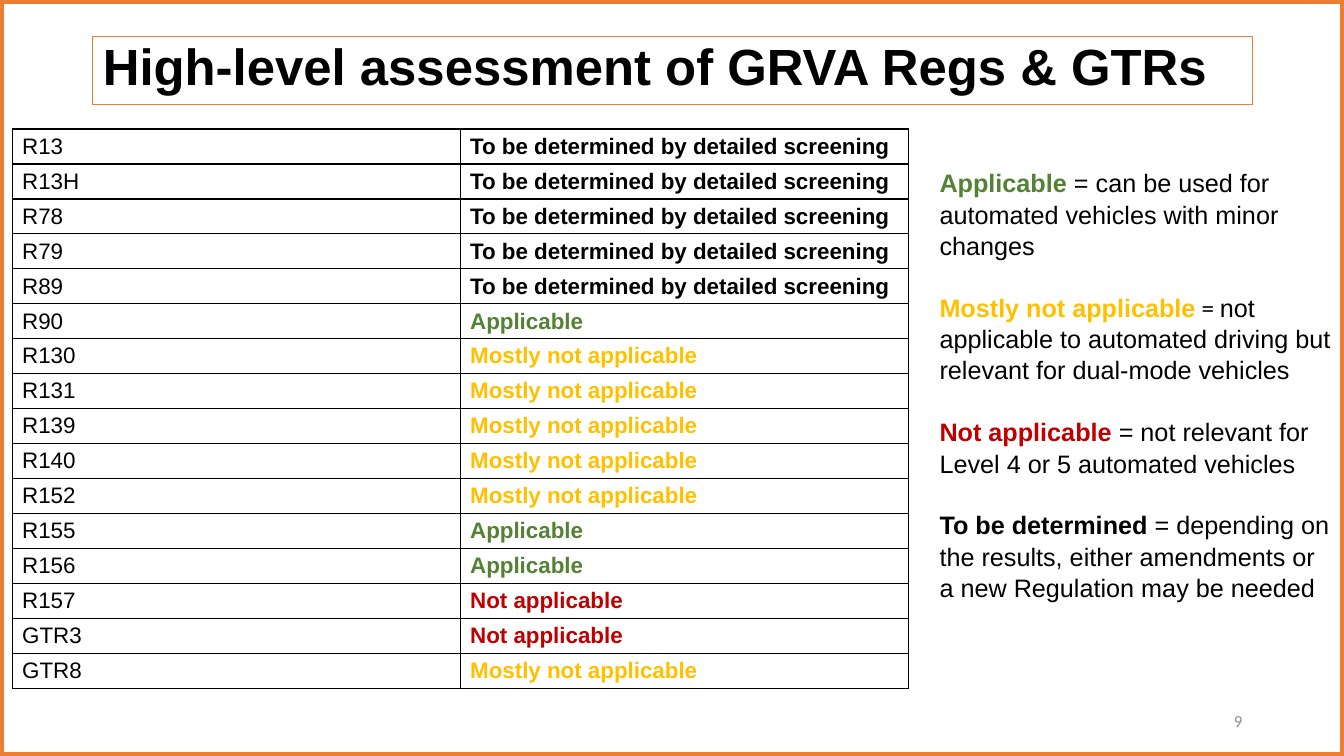
from dataclasses import dataclass

from lxml.etree import SubElement
from pptx import Presentation
from pptx.dml.color import RGBColor
from pptx.enum.shapes import MSO_SHAPE
from pptx.enum.text import MSO_ANCHOR, MSO_AUTO_SIZE, PP_ALIGN
from pptx.oxml.ns import qn
from pptx.util import Inches, Pt


@dataclass(frozen=True)
class Theme:
    black: str = "000000"
    green: str = "548235"
    amber: str = "FFC000"
    red: str = "C00000"
    grey: str = "8C8C8C"
    orange: str = "ED7D31"
    font: str = "Arial"
    alt_font: str = "Calibri"
    title: float = 36.3
    legend: float = 18
    cell: float = 16
    number: float = 12


T = Theme()
W, H = 13.33, 7.5
COL_W, ROW_H = W / 3, 0.347

TBD = "To be determined by detailed screening"
YES, MOSTLY, NO = "Applicable", "Mostly not applicable", "Not applicable"
RATING_COLORS = {TBD: T.black, YES: T.green, MOSTLY: T.amber, NO: T.red}

# Regulations grouped in runs that share a rating
GROUPS = [
    (("R13", "R13H", "R78", "R79", "R89"), TBD),
    (("R90",), YES),
    (("R130", "R131", "R139", "R140", "R152"), MOSTLY),
    (("R155", "R156"), YES),
    (("R157", "GTR3"), NO),
    (("GTR8",), MOSTLY),
]

# Term, its colour, equals sign, font of the sign, meaning
LEGEND = [
    (YES, T.green, " = ", T.font,
     "can be used for automated vehicles with minor changes"),
    (MOSTLY, T.amber, " = ", T.alt_font,
     "not applicable to automated driving but relevant for dual-mode vehicles"),
    (NO, T.red, " = ", T.font,
     "not relevant for Level 4 or 5 automated vehicles"),
    ("To be determined", T.black, " = ", T.font,
     "depending on the results, either amendments or a new Regulation may be needed"),
]


def set_all(obj, values):
    for name, value in values.items():
        setattr(obj, name, value)


def add_run(p, text, size, color=T.black, bold=False, font=T.font):
    r = p.add_run()
    r.text = text
    set_all(r.font, {"size": Pt(size), "bold": bold, "name": font})
    r.font.color.rgb = RGBColor.from_string(color)


def place(sp, left, top, width, height):
    set_all(sp, {"left": Inches(left), "top": Inches(top),
                 "width": Inches(width), "height": Inches(height)})


def outline(sp, width):
    sp.line.color.rgb = RGBColor.from_string(T.orange)
    sp.line.width = Pt(width)


def add_title(s, text):
    sp = s.shapes.title
    place(sp, 0.92, 0.36, 11.5, 0.68)
    outline(sp, 0.75)
    tf = sp.text_frame
    set_all(tf, {"word_wrap": True, "auto_size": MSO_AUTO_SIZE.NONE,
                 "vertical_anchor": MSO_ANCHOR.MIDDLE})
    p = tf.paragraphs[0]
    set_all(p, {"alignment": PP_ALIGN.LEFT, "line_spacing": 0.8})
    add_run(p, text, T.title, bold=True)


def add_text_box(s, left, top, width, height, anchor=MSO_ANCHOR.TOP):
    tf = s.shapes.add_textbox(Inches(left), Inches(top),
                              Inches(width), Inches(height)).text_frame
    set_all(tf, {"word_wrap": True, "vertical_anchor": anchor})
    return tf


def add_borders(cell):
    tc_pr = cell._tc.get_or_add_tcPr()
    for i, side in enumerate(("lnL", "lnR", "lnT", "lnB")):
        ln = SubElement(tc_pr, qn(f"a:{side}"), w=str(Pt(1)))
        fill = SubElement(ln, qn("a:solidFill"))
        SubElement(fill, qn("a:srgbClr"), val=T.black)
        # Border lines come before the cell fill
        tc_pr.insert(i, ln)


def fill_cell(cell, text, color, bold):
    cell.fill.background()
    set_all(cell, {"margin_top": Inches(0.04), "margin_bottom": Inches(0.04),
                   "vertical_anchor": MSO_ANCHOR.MIDDLE})
    add_run(cell.text_frame.paragraphs[0], text, T.cell, color, bold)
    add_borders(cell)


def add_ratings(s):
    rows = [(reg, rating) for regs, rating in GROUPS for reg in regs]
    table = s.shapes.add_table(len(rows), 2, Inches(0.12), Inches(1.28),
                               Inches(2 * COL_W), Inches(len(rows) * ROW_H)).table
    set_all(table, {"first_row": False, "horz_banding": False})
    for col in table.columns:
        col.width = Inches(COL_W)
    for i, (reg, rating) in enumerate(rows):
        table.rows[i].height = Inches(ROW_H)
        fill_cell(table.cell(i, 0), reg, T.black, False)
        fill_cell(table.cell(i, 1), rating, RATING_COLORS[rating], True)


def add_legend(s):
    tf = add_text_box(s, 9.22, 1.6, W - 9.22, 4.34)
    for i, (term, color, sign, sign_font, meaning) in enumerate(LEGEND):
        p = tf.add_paragraph() if i else tf.paragraphs[0]
        set_all(p, {"line_spacing": 1.04, "space_before": Pt(21.6 if i else 0)})
        add_run(p, term, T.legend, color, True)
        add_run(p, sign, T.legend, font=sign_font)
        add_run(p, meaning, T.legend)


def add_page_number(s, number):
    p = add_text_box(s, 9.42, 6.95, 3, 0.4, MSO_ANCHOR.MIDDLE).paragraphs[0]
    p.alignment = PP_ALIGN.RIGHT
    add_run(p, number, T.number, T.grey, font=T.alt_font)


def add_frame(s):
    sp = s.shapes.add_shape(MSO_SHAPE.RECTANGLE, 0, 0, Inches(W), Inches(H))
    sp.shadow.inherit = False
    sp.fill.background()
    outline(sp, 6)


def main():
    prs = Presentation()
    set_all(prs, {"slide_width": Inches(W), "slide_height": Inches(H)})
    s = prs.slides.add_slide(prs.slide_layouts[5])
    add_title(s, "High-level assessment of GRVA Regs & GTRs")
    add_page_number(s, "9")
    add_ratings(s)
    add_legend(s)
    add_frame(s)
    prs.save("out.pptx")


if __name__ == "__main__":
    main()
